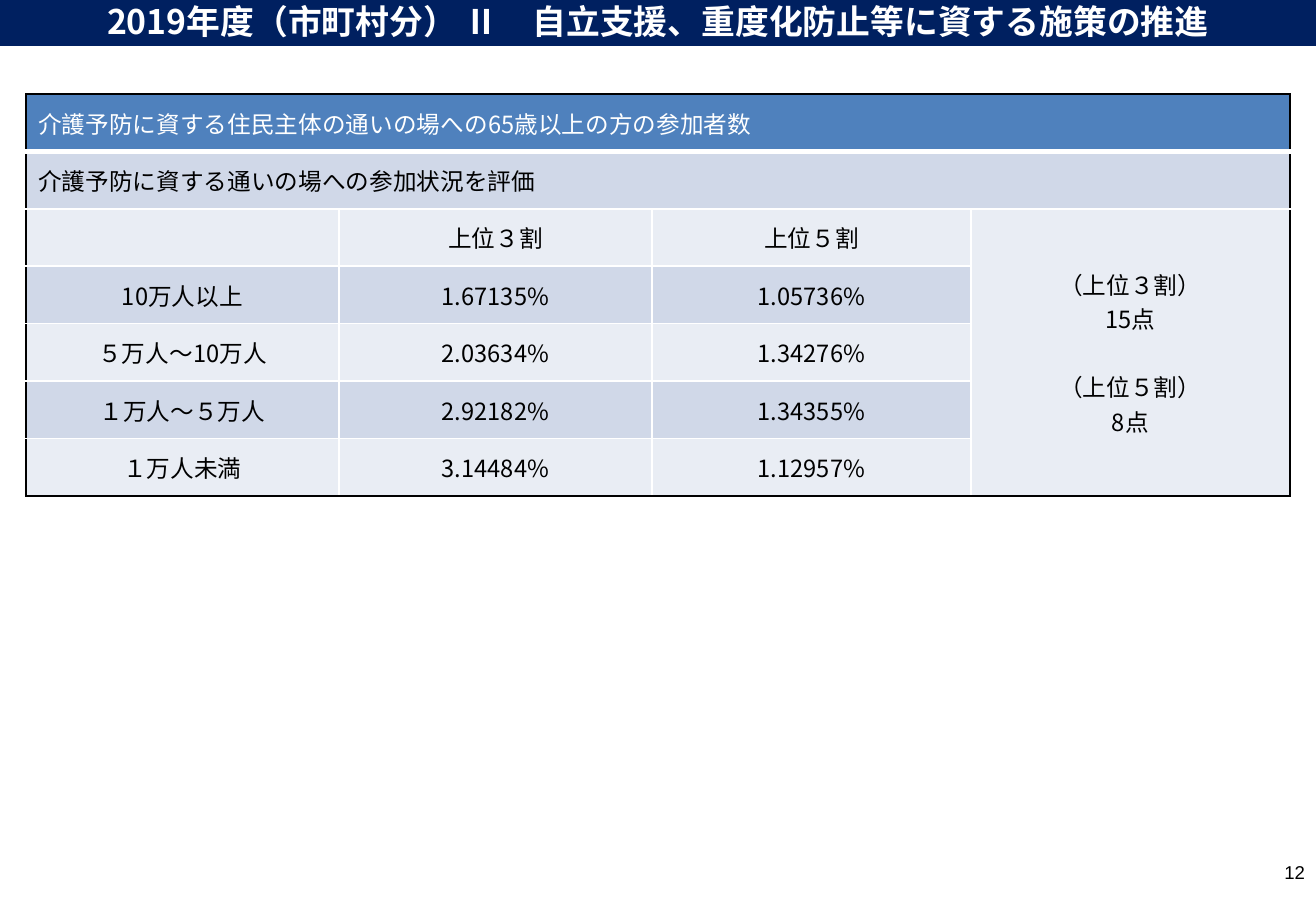
from dataclasses import dataclass

from pptx import Presentation
from pptx.dml.color import RGBColor
from pptx.enum.text import MSO_ANCHOR, MSO_AUTO_SIZE, PP_ALIGN
from pptx.oxml.ns import qn
from pptx.util import Pt
from lxml.etree import SubElement

EMU_PER_PX = 7526


@dataclass(frozen=True)
class Theme:
    font: str = "Noto Sans CJK JP"
    number_font: str = "Arial"
    navy: str = "002060"
    header: str = "4F81BD"
    band_dark: str = "D0D8E8"
    band_light: str = "E9EDF4"
    white: str = "FFFFFF"
    black: str = "000000"
    title_size: int = 20
    table_size: int = 14
    number_size: int = 11
    thin: int = 1
    thick: int = 3


THEME = Theme()

TITLE = "2019年度（市町村分） Ⅱ　自立支援、重度化防止等に資する施策の推進"
INDICATOR = "介護予防に資する住民主体の通いの場への65歳以上の方の参加者数"
EVALUATION = "介護予防に資する通いの場への参加状況を評価"
POINTS = "（上位３割）\n15点\n（上位５割）\n8点"
ROWS = [
    [INDICATOR, "", "", ""],
    [EVALUATION, "", "", ""],
    ["", "上位３割", "上位５割", POINTS],
    ["10万人以上", "1.67135%", "1.05736%", ""],
    ["５万人～10万人", "2.03634%", "1.34276%", ""],
    ["１万人～５万人", "2.92182%", "1.34355%", ""],
    ["１万人未満", "3.14484%", "1.12957%", ""],
]
COLUMN_WIDTHS = [313, 313, 319, 319]
TABLE_HEIGHT = 402


def px(length):
    return length * EMU_PER_PX


def place(shape, left, top, width, height):
    shape.left, shape.top = px(left), px(top)
    shape.width, shape.height = px(width), px(height)


def format_text(text_frame, size, color, font, align, bold=False):
    for paragraph in text_frame.paragraphs:
        paragraph.alignment = align
        for run in paragraph.runs:
            run.font.size = Pt(size)
            run.font.bold = bold
            run.font.name = font
            run.font.color.rgb = RGBColor.from_string(color)
            SubElement(run.font._element, qn("a:ea"), typeface=font)


def add_title(slide):
    title = slide.shapes.title
    place(title, 0, -4, 1316, 50)
    title.fill.solid()
    title.fill.fore_color.rgb = RGBColor.from_string(THEME.navy)
    text_frame = title.text_frame
    text_frame.text = TITLE
    text_frame.auto_size = MSO_AUTO_SIZE.NONE
    text_frame.vertical_anchor = MSO_ANCHOR.MIDDLE
    format_text(text_frame, THEME.title_size, THEME.white, THEME.font, PP_ALIGN.CENTER, bold=True)


def set_border(cell, side, color, width):
    """Draw one side (L, R, T or B); call in that order, before the fill."""
    properties = cell._tc.get_or_add_tcPr()
    line = SubElement(properties, qn(f"a:ln{side}"), w=str(Pt(width)))
    fill = SubElement(line, qn("a:solidFill"))
    SubElement(fill, qn("a:srgbClr"), val=color)


def border_cell(cell, row, column):
    """Black on the table's outline, white inside, thick under the header row."""
    last_row = row + cell.span_height == len(ROWS)
    last_column = column + cell.span_width == len(COLUMN_WIDTHS)
    outer = {"L": column == 0, "R": last_column, "T": row == 0, "B": last_row}
    under_header = {0: "B", 1: "T"}.get(row)
    for side, is_outer in outer.items():
        color = THEME.black if is_outer else THEME.white
        set_border(cell, side, color, THEME.thick if side == under_header else THEME.thin)


def row_fill(row):
    if row == 0:
        return THEME.header
    return THEME.band_dark if row % 2 else THEME.band_light


def format_cell(cell, row, column):
    border_cell(cell, row, column)
    cell.fill.solid()
    cell.fill.fore_color.rgb = RGBColor.from_string(row_fill(row))
    cell.vertical_anchor = MSO_ANCHOR.MIDDLE
    cell.text_frame.text = ROWS[row][column]
    color = THEME.white if row == 0 else THEME.black
    align = PP_ALIGN.LEFT if row < 2 else PP_ALIGN.CENTER
    format_text(cell.text_frame, THEME.table_size, color, THEME.font, align)


def add_score_table(slide):
    frame = slide.shapes.add_table(
        len(ROWS), len(COLUMN_WIDTHS), px(26), px(94), px(sum(COLUMN_WIDTHS)), px(TABLE_HEIGHT)
    )
    table = frame.table
    table.first_row = table.horz_banding = False
    for column, width in zip(table.columns, COLUMN_WIDTHS):
        column.width = px(width)
    for row in table.rows:
        row.height = px(TABLE_HEIGHT) // len(ROWS)
    for row in (0, 1):
        table.cell(row, 0).merge(table.cell(row, 3))
    points = table.cell(2, 3)
    points.merge(table.cell(6, 3))
    for row in range(len(ROWS)):
        for column in range(len(COLUMN_WIDTHS)):
            format_cell(table.cell(row, column), row, column)
    points.text_frame.paragraphs[2].space_before = Pt(20)


def add_page_number(slide, number):
    box = slide.shapes.add_textbox(px(1010), px(848), px(307), px(49))
    text_frame = box.text_frame
    text_frame.word_wrap = True
    text_frame.vertical_anchor = MSO_ANCHOR.MIDDLE
    text_frame.text = str(number)
    format_text(text_frame, THEME.number_size, THEME.black, THEME.number_font, PP_ALIGN.RIGHT)


def main():
    presentation = Presentation()
    presentation.slide_width, presentation.slide_height = px(1316), px(911)
    slide = presentation.slides.add_slide(presentation.slide_layouts[5])
    add_title(slide)
    add_score_table(slide)
    add_page_number(slide, 12)
    presentation.save("out.pptx")


if __name__ == "__main__":
    main()
